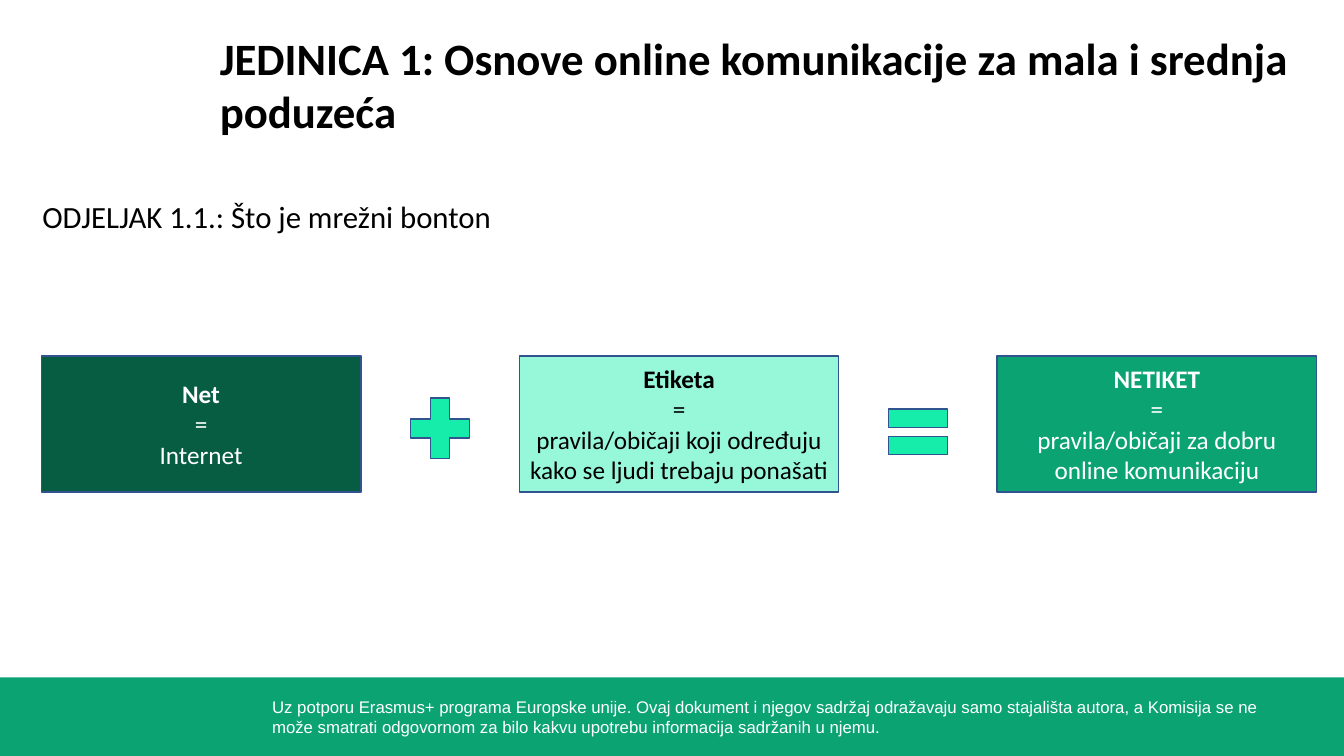
from dataclasses import dataclass

from pptx import Presentation
from pptx.dml.color import RGBColor
from pptx.enum import shapes, text
from pptx.util import Inches, Pt


@dataclass(frozen=True)
class Theme:
    font: str = "Calibri"
    footer_font: str = "Arial"
    black: str = "000000"
    white: str = "FFFFFF"
    dark: str = "075D42"
    light: str = "97F7D9"
    green: str = "0CA373"
    mint: str = "17EDAB"
    outline: str = "31538F"
    title: int = 32
    subtitle: int = 22
    body: int = 18
    footer: int = 12


T = Theme()
SHAPE = shapes.MSO_SHAPE
SLIDE_W, SLIDE_H = 13.33, 7.5

# Equation row: equal cards with an operator centred in each gap
CARD_LEFT, CARD_TOP, CARD_W, CARD_H = 0.41, 3.53, 3.17, 1.35
CARD_STEP = 4.74
CARDS = [
    ("Net", "Internet", T.dark, T.white),
    ("Etiketa", "pravila/običaji koji određuju kako se ljudi trebaju ponašati",
     T.light, T.black),
    ("NETIKET", "pravila/običaji za dobru online komunikaciju", T.green, T.white),
]
OPERATOR_W = 0.8
OPERATORS = [(SHAPE.MATH_PLUS, 3.84, 0.82), (SHAPE.MATH_EQUAL, 3.9, 0.77)]


def write(tf, lines, *, size, color, font=T.font, bold_first=False,
          align=text.PP_ALIGN.LEFT, anchor=text.MSO_ANCHOR.TOP,
          inset=(0.1, 0.05, 0.1, 0.05)):
    """Fill a text frame with one paragraph per line."""
    tf.word_wrap = True
    tf.vertical_anchor = anchor
    (tf.margin_left, tf.margin_top,
     tf.margin_right, tf.margin_bottom) = map(Inches, inset)
    for i, line in enumerate(lines):
        p = tf.add_paragraph() if i else tf.paragraphs[0]
        p.alignment = align
        r = p.add_run()
        r.text = line
        r.font.name = font
        r.font.size = Pt(size)
        r.font.bold = bold_first and i == 0
        r.font.color.rgb = RGBColor.from_string(color)


def add_text(s, box, line, **fmt):
    tb = s.shapes.add_textbox(*map(Inches, box))
    write(tb.text_frame, [line], **fmt)


def add_shape(s, kind, box, fill, outline=None):
    sp = s.shapes.add_shape(kind, *map(Inches, box))
    sp.shadow.inherit = False
    sp.fill.solid()
    sp.fill.fore_color.rgb = RGBColor.from_string(fill)
    if outline:
        sp.line.color.rgb = RGBColor.from_string(outline)
        sp.line.width = Pt(1)
    else:
        sp.line.fill.background()
    return sp


def add_card(s, left, heading, meaning, fill, color):
    box = (left, CARD_TOP, CARD_W, CARD_H)
    sp = add_shape(s, SHAPE.RECTANGLE, box, fill, T.outline)
    write(sp.text_frame, [heading, "=", meaning], size=T.body, color=color,
          bold_first=True, align=text.PP_ALIGN.CENTER,
          anchor=text.MSO_ANCHOR.MIDDLE)


def main():
    prs = Presentation()
    prs.slide_width, prs.slide_height = Inches(SLIDE_W), Inches(SLIDE_H)
    s = prs.slides.add_slide(prs.slide_layouts[6])

    # Footer band
    add_shape(s, SHAPE.RECTANGLE, (0, 6.72, SLIDE_W, 0.78), T.green)
    add_text(s, (2.6, 6.86, 10.42, 0.5),
             "Uz potporu Erasmus+ programa Europske unije. Ovaj dokument i njegov "
             "sadržaj odražavaju samo stajališta autora, a Komisija se ne može "
             "smatrati odgovornom za bilo kakvu upotrebu informacija sadržanih u "
             "njemu.", size=T.footer, color=T.white, font=T.footer_font)

    # Headings
    add_text(s, (2.18, 0.29, 11.1, 1.09),
             "JEDINICA 1: Osnove online komunikacije za mala i srednja poduzeća",
             size=T.title, color=T.black, bold_first=True, inset=(0, 0.01, 0, 0))
    add_text(s, (0.42, 1.94, 4.7, 0.67), "ODJELJAK 1.1.: Što je mrežni bonton",
             size=T.subtitle, color=T.black, inset=(0, 0.02, 0, 0))

    # Equation: cards, then operators
    for i, card in enumerate(CARDS):
        add_card(s, CARD_LEFT + i * CARD_STEP, *card)
    gap = CARD_STEP - CARD_W
    for i, (kind, top, height) in enumerate(OPERATORS):
        left = CARD_LEFT + i * CARD_STEP + CARD_W + (gap - OPERATOR_W) / 2
        add_shape(s, kind, (left, top, OPERATOR_W, height), T.mint, T.outline)

    prs.save("out.pptx")


if __name__ == "__main__":
    main()
